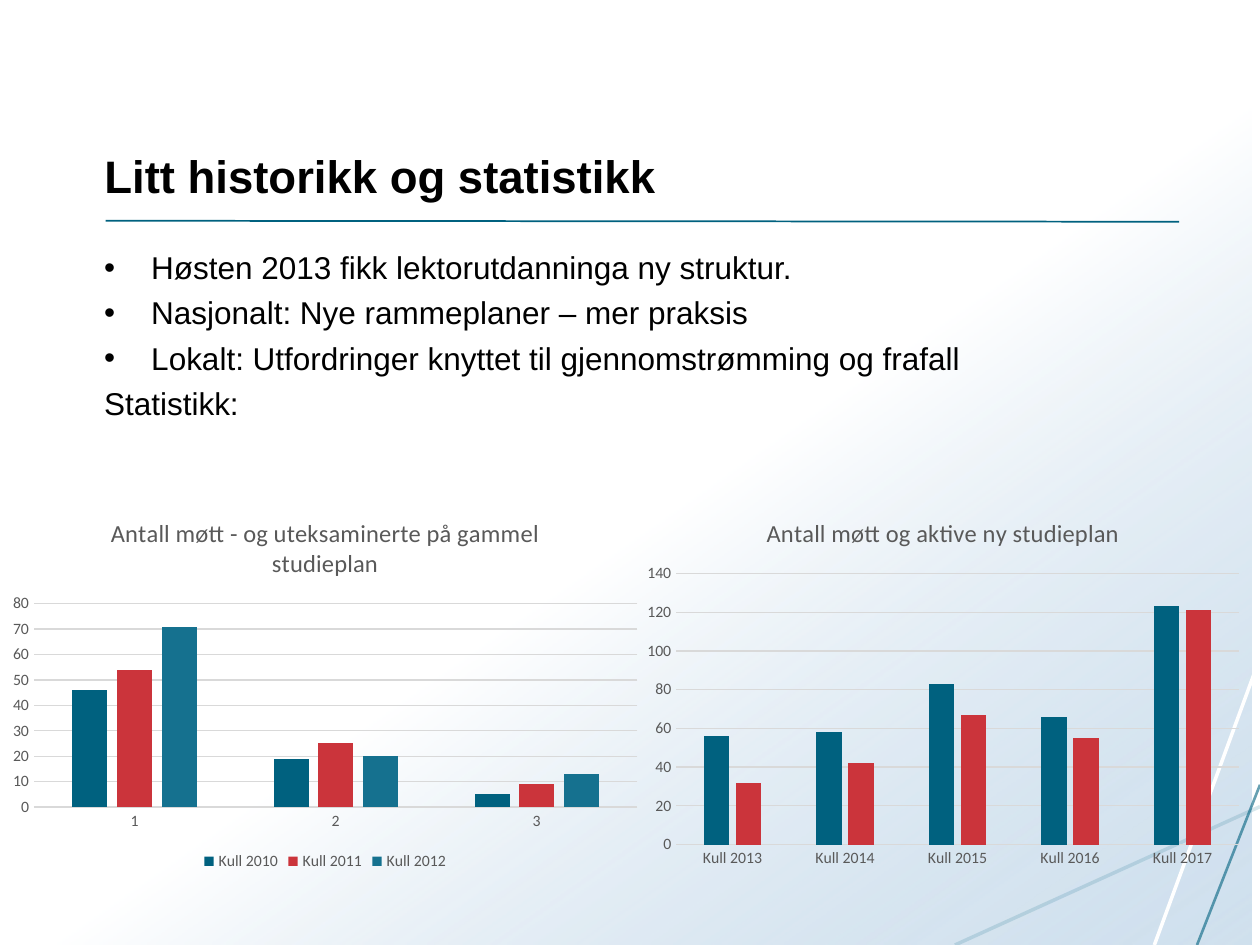
from lxml.etree import SubElement
from pptx import Presentation
from pptx.chart.data import CategoryChartData
from pptx.dml.color import RGBColor
from pptx.enum.chart import XL_CHART_TYPE as ChartType, XL_LEGEND_POSITION as LegendPosition
from pptx.enum.chart import XL_TICK_MARK as TickMark
from pptx.enum.shapes import MSO_CONNECTOR as Connector, MSO_SHAPE as Shape
from pptx.enum.text import MSO_ANCHOR as Anchor, PP_ALIGN as Align
from pptx.oxml.ns import qn
from pptx.util import Cm, Pt

COLORS = {"white": "FFFFFF", "sky": "A9C7E0", "petrol": "00617F", "teal": "15718F",
          "red": "CB343B", "black": "000000", "gray": "595959", "grid": "D9D9D9"}


def rgb(name):
    return RGBColor.from_string(COLORS[name])


def set_opacity(element, percent):
    color = next(element.iter(qn("a:srgbClr")))
    SubElement(color, qn("a:alpha")).set("val", str(percent * 1000))


prs = Presentation()
prs.slide_width, prs.slide_height = Cm(25.4), Cm(19.05)
slide = prs.slides.add_slide(prs.slide_layouts[5])
shapes = slide.shapes

backdrop = shapes.add_shape(Shape.RECTANGLE, Cm(-0.18), 0, Cm(25.4), Cm(19.05))
backdrop.shadow.inherit = False
backdrop.line.fill.background()
backdrop.fill.gradient()
backdrop.fill.gradient_angle = 305
near, far = backdrop.fill.gradient_stops
near.position, far.position = 0.54, 1
near.color.rgb, far.color.rgb = rgb("white"), rgb("sky")
set_opacity(backdrop._element.spPr.find(".//" + qn("a:gs") + "[2]"), 54)

for x1, y1, x2, y2, color, width, opacity in [
    (25.4, 13.26, 23.27, 19.05, "white", 2, 100),
    (25.4, 16.26, 19.25, 19.05, "teal", 2, 16),
    (25.4, 15.82, 24.13, 19.05, "petrol", 1.5, 60),
    (2.13, 4.45, 23.77, 4.47, "petrol", 1, 100),
]:
    stroke = shapes.add_connector(Connector.STRAIGHT, Cm(x1), Cm(y1), Cm(x2), Cm(y2))
    stroke.line.color.rgb = rgb(color)
    stroke.line.width = Pt(width)
    if opacity < 100:
        set_opacity(stroke._element.spPr, opacity)
    SubElement(stroke._element.spPr, qn("a:effectLst"))

heading = shapes.title
shapes._spTree.append(heading._element)
heading.left, heading.top, heading.width, heading.height = Cm(1.85), Cm(0.84), Cm(21.89), Cm(3.38)
heading.text_frame.text = "Litt historikk og statistikk"
heading.text_frame.vertical_anchor = Anchor.BOTTOM
heading_line = heading.text_frame.paragraphs[0]
heading_line.alignment = Align.LEFT
heading_line.font.name, heading_line.font.size, heading_line.font.bold = "Arial", Pt(26), True
heading_line.font.color.rgb = rgb("black")

history = shapes.add_textbox(Cm(1.85), Cm(4.88), Cm(21.92), Cm(12.14)).text_frame
history.word_wrap = True
history.text = "\n".join([
    "Høsten 2013 fikk lektorutdanninga ny struktur.",
    "Nasjonalt: Nye rammeplaner – mer praksis",
    "Lokalt: Utfordringer knyttet til gjennomstrømming og frafall",
    "Statistikk:",
])
for point in history.paragraphs:
    point.space_before = Pt(4.2)
    point.font.name, point.font.size = "Arial", Pt(18)
    point.font.color.rgb = rgb("black")
for point in history.paragraphs[:3]:
    props = point._p.get_or_add_pPr()
    props.set("marL", str(Cm(0.95)))
    props.set("indent", str(Cm(-0.95)))
    SubElement(props, qn("a:buFont")).set("typeface", "Arial")
    SubElement(props, qn("a:buChar")).set("char", "•")
    props.append(props.find(qn("a:defRPr")))

old_plan = ("Antall møtt - og uteksaminerte på gammel studieplan", 0, 13.11, True,
            ["1", "2", "3"],
            [("Kull 2010", [46, 19, 5]), ("Kull 2011", [54, 25, 9]), ("Kull 2012", [71, 20, 13])])
new_plan = ("Antall møtt og aktive ny studieplan", 12.8, 12.42, False,
            [f"Kull {year}" for year in range(2013, 2018)],
            [("Series 1", [56, 58, 83, 66, 123]), ("Series 2", [32, 42, 67, 55, 121])])

for caption, left, width, has_legend, cohorts, series in (old_plan, new_plan):
    counts = CategoryChartData()
    counts.categories = cohorts
    for name, values in series:
        counts.add_series(name, values)
    chart = shapes.add_chart(ChartType.COLUMN_CLUSTERED, Cm(left), Cm(10.03),
                             Cm(width), Cm(7.62), counts).chart
    chart.font.name, chart.font.size = "Calibri", Pt(9)
    chart.font.color.rgb = rgb("gray")

    chart.has_title = True
    chart.chart_title.include_in_layout = False
    chart.chart_title.text_frame.text = caption
    caption_font = chart.chart_title.text_frame.paragraphs[0].font
    caption_font.name, caption_font.size, caption_font.bold = "Calibri", Pt(14), False
    caption_font.color.rgb = rgb("gray")

    chart.has_legend = has_legend
    if has_legend:
        chart.legend.position = LegendPosition.BOTTOM
        chart.legend.include_in_layout = False

    for axis in (chart.category_axis, chart.value_axis):
        axis.major_tick_mark = axis.minor_tick_mark = TickMark.NONE
    gridlines = chart.value_axis.major_gridlines
    for line in (chart.category_axis.format.line, gridlines.format.line):
        line.color.rgb = rgb("grid")
        line.width = Pt(0.75)
    chart.value_axis.format.line.fill.background()

    columns = chart.plots[0]
    columns.gap_width, columns.overlap, columns.vary_by_categories = 219, -27, False
    for cohort, color in zip(columns.series, ("petrol", "red", "teal")):
        cohort.format.fill.solid()
        cohort.format.fill.fore_color.rgb = rgb(color)

prs.save("out.pptx")
